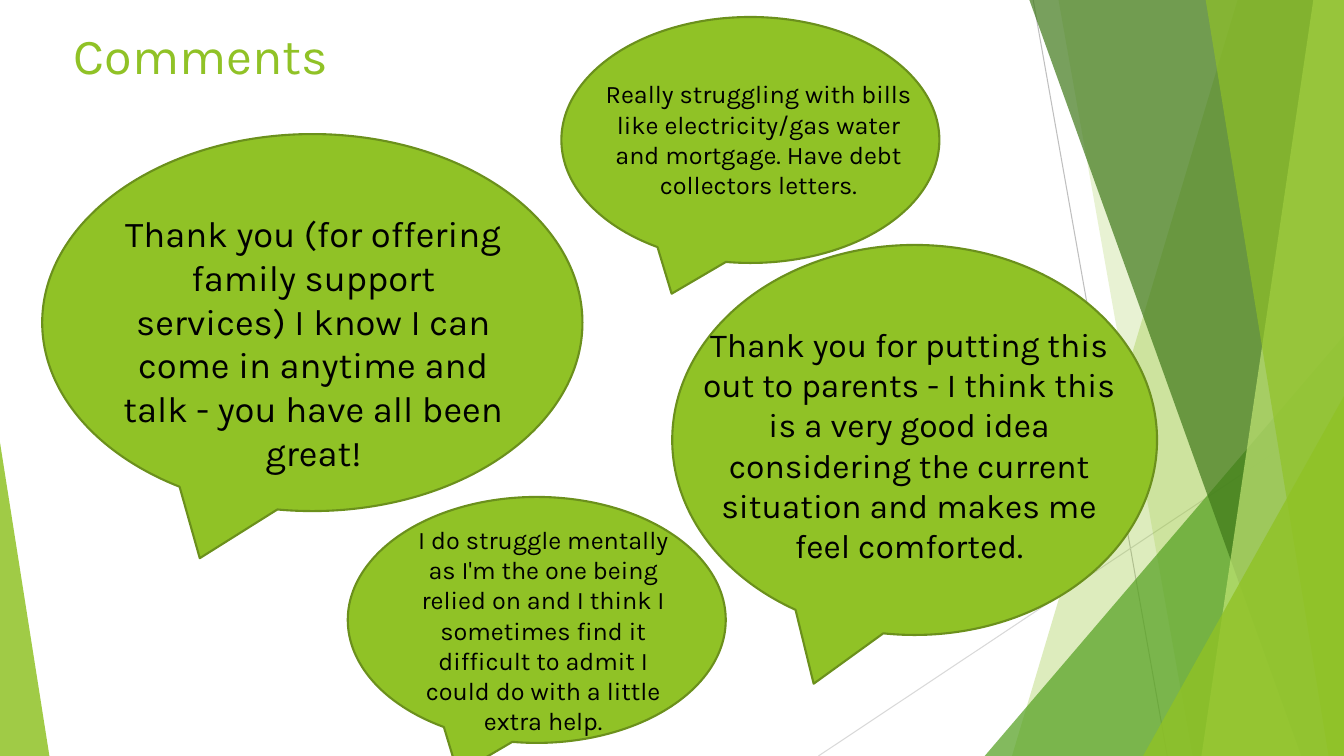
from dataclasses import dataclass
from typing import NamedTuple

from lxml.etree import SubElement
from pptx import Presentation
from pptx.dml.color import RGBColor
from pptx.enum.shapes import MSO_CONNECTOR, MSO_SHAPE
from pptx.enum.text import MSO_ANCHOR, MSO_AUTO_SIZE, PP_ALIGN
from pptx.oxml.ns import qn
from pptx.util import Pt

STRAIGHT = MSO_CONNECTOR.STRAIGHT
BUBBLE, WEDGE = MSO_SHAPE.OVAL_CALLOUT, MSO_SHAPE.ISOSCELES_TRIANGLE
TOP = MSO_ANCHOR.TOP
FIXED, GROW = MSO_AUTO_SIZE.NONE, MSO_AUTO_SIZE.SHAPE_TO_FIT_TEXT
LEFT, CENTER = PP_ALIGN.LEFT, PP_ALIGN.CENTER
WIDE, HIGH, BLEED = 960, 540, -0.6


@dataclass(frozen=True)
class Theme:
    font: str = "Karla"
    lime: str = "90C226"
    edge: str = "6B901C"
    green: str = "54A021"
    dark: str = "3F7819"
    pale: str = "C0E474"
    ink: str = "000000"
    gray: str = "BFBFBF"
    mist: str = "D9D9D9"
    title: int = 36
    large: int = 26
    mid: int = 24
    small: int = 18


THEME = Theme()


class Box(NamedTuple):
    left: float
    top: float
    width: float
    height: float

    def points(self) -> list:
        return [Pt(value) for value in self]


class Ray(NamedTuple):
    ends: tuple
    color: str


class Panel(NamedTuple):
    """Slanted left edge, filled out to the right side of the slide."""
    top: float
    foot: float
    color: str
    alpha: int


class Corner(NamedTuple):
    box: Box
    apex: float
    color: str
    alpha: int


class Quote(NamedTuple):
    oval: Box
    area: Box
    size: int
    text: str


RAYS = [
    Ray((738, 0, 833.8, HIGH), THEME.gray),
    Ray((WIDE, 290.2, 584.6, HIGH), THEME.mist),
]

# Back to front
FACETS = [
    Panel(884.2, 722.9, THEME.lime, 30),
    Panel(756, 851.8, THEME.lime, 20),
    Corner(Box(703.4, 239.8, 256.6, 300.2), 1, THEME.green, 72),
    Panel(735.1, 929.5, THEME.dark, 70),
    Panel(938.2, 858.2, THEME.pale, 70),
    Panel(861.1, 949, THEME.lime, 65),
    Corner(Box(816.5, 283, 143.5, 257), 1, THEME.lime, 80),
    Corner(Box(0, 316.1, 35.3, 223.9), 0, THEME.lime, 85),
]

QUOTES = [
    Quote(Box(480.2, 175, 346.3, 278.6), Box(487.4, 227.5, 324, 181.4), THEME.mid,
          "Thank you for putting this out to parents - I think this is a very "
          "good idea considering the current situation and makes me feel comforted."),
    Quote(Box(30.2, 95.8, 385.9, 269.3), Box(74.9, 147.6, 298.1, 164.9), THEME.large,
          "Thank you (for offering family support services) I know I can come in "
          "anytime and talk - you have all been great!"),
    Quote(Box(401, 12.2, 270, 175.7), Box(424.8, 52.6, 234, 94.3), THEME.small,
          "Really struggling with bills like electricity/gas water and mortgage. "
          "Have debt collectors letters."),
    Quote(Box(248.4, 355, 270, 175.7), Box(285.8, 370.8, 204.5, 159.8), THEME.small,
          "I do struggle mentally as I'm the one being relied on and I think I "
          "sometimes find it difficult to admit I could do with a little extra help."),
]


def apply(target, values: dict) -> None:
    for name, value in values.items():
        setattr(target, name, value)


def paint(shape, color: str, alpha: int = 100) -> None:
    shape.shadow.inherit = False
    shape.fill.solid()
    shape.fill.fore_color.rgb = RGBColor.from_string(color)
    if alpha < 100:
        tint = shape.element.spPr.find(".//" + qn("a:srgbClr"))
        SubElement(tint, qn("a:alpha"), val=str(alpha * 1000))
    shape.line.fill.background()


def stroke(line, color: str, width: float) -> None:
    line.color.rgb = RGBColor.from_string(color)
    line.width = Pt(width)


def write(shape, text: str, size: int, color: str, align, fit) -> None:
    frame = shape.text_frame
    apply(frame, {"text": text, "word_wrap": True, "auto_size": fit,
                  "vertical_anchor": TOP})
    para = frame.paragraphs[0]
    para.alignment = align
    font = para.runs[0].font
    apply(font, {"name": THEME.font, "size": Pt(size)})
    font.color.rgb = RGBColor.from_string(color)


def draw_ray(slide, ray: Ray) -> None:
    line = slide.shapes.add_connector(STRAIGHT, *[Pt(value) for value in ray.ends])
    stroke(line.line, ray.color, 0.75)
    SubElement(line.element.spPr, qn("a:effectLst"))


def draw_panel(slide, panel: Panel) -> None:
    start, *rest = [(Pt(x), Pt(y)) for x, y in (
        (panel.top, BLEED), (WIDE, BLEED), (WIDE, HIGH), (panel.foot, HIGH))]
    path = slide.shapes.build_freeform(*start)
    path.add_line_segments(rest, close=True)
    paint(path.convert_to_shape(), panel.color, panel.alpha)


def draw_corner(slide, corner: Corner) -> None:
    shape = slide.shapes.add_shape(WEDGE, *corner.box.points())
    shape.adjustments[0] = corner.apex
    paint(shape, corner.color, corner.alpha)


def draw_quote(slide, quote: Quote) -> None:
    oval = slide.shapes.add_shape(BUBBLE, *quote.oval.points())
    paint(oval, THEME.lime)
    stroke(oval.line, THEME.edge, 1.5)
    label = slide.shapes.add_textbox(*quote.area.points())
    write(label, quote.text, quote.size, THEME.ink, CENTER, GROW)


def main() -> None:
    deck = Presentation()
    apply(deck, {"slide_width": Pt(WIDE), "slide_height": Pt(HIGH)})
    slide = deck.slides.add_slide(deck.slide_layouts[5])

    # Title
    title = slide.shapes.title
    place = Box(45.4, 13.7, 676.8, 103.7)
    apply(title, {name: Pt(value) for name, value in place._asdict().items()})
    write(title, "Comments", THEME.title, THEME.lime, LEFT, FIXED)

    # Backdrop
    for ray in RAYS:
        draw_ray(slide, ray)
    for facet in FACETS:
        draw = draw_panel if isinstance(facet, Panel) else draw_corner
        draw(slide, facet)

    # Speech bubbles
    for quote in QUOTES:
        draw_quote(slide, quote)

    deck.save("out.pptx")


if __name__ == "__main__":
    main()
